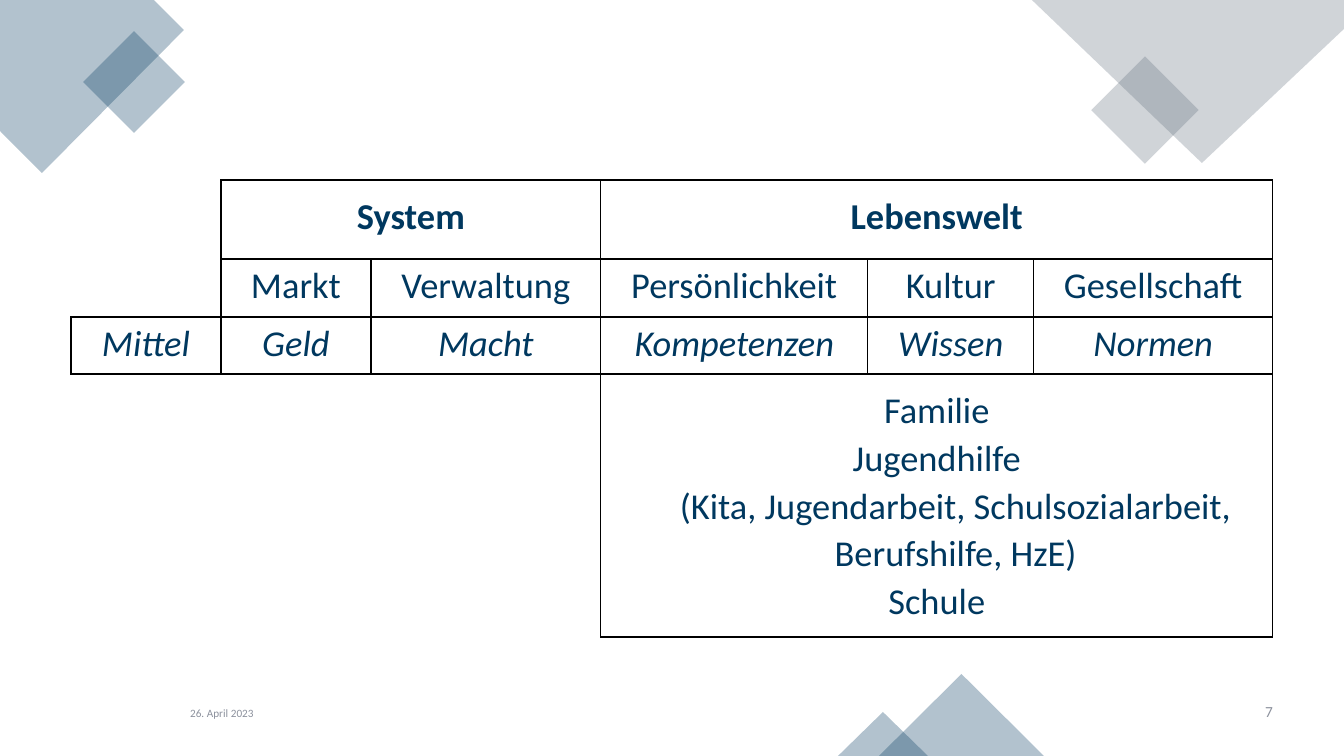
import pptx
import pptx.dml.color
import pptx.enum.shapes
import pptx.enum.text
import pptx.oxml
import pptx.oxml.ns
import pptx.util
from lxml import etree

SHAPE = pptx.enum.shapes.MSO_SHAPE
ALIGN = pptx.enum.text.PP_ALIGN
NAVY, SLATE, GREY, BLACK = "00385F", "657280", "8C919D", "000000"
COLS = [150, 150, 230, 267, 166, 239]
ROWS = [79, 58, 57, 263]
CELLS = [
    [None, "System", "", "Lebenswelt", "", ""],
    [None, "Markt", "Verwaltung", "Persönlichkeit", "Kultur", "Gesellschaft"],
    ["Mittel", "Geld", "Macht", "Kompetenzen", "Wissen", "Normen"],
    [None, None, None,
     "Familie\nJugendhilfe\v(Kita, Jugendarbeit, Schulsozialarbeit, Berufshilfe, HzE)\nSchule",
     "", ""],
]
SPANS = [(0, 1, 2), (0, 3, 5), (3, 3, 5)]
EDGES = [("L", 0, -1), ("R", 0, 1), ("T", -1, 0), ("B", 1, 0)]


def px(n):
    return round(n * 914400 / 100.8)


def rgb(color):
    return pptx.dml.color.RGBColor.from_string(color)


class Deck:
    """Holds the style and the current slide and draws its elements."""

    font = "Calibri"

    def __init__(self, prs):
        self.s = prs.slides.add_slide(prs.slide_layouts[6])

    def tint(self, sp, color):
        sp.shadow.inherit = False
        sp.line.fill.background()
        sp.fill.solid()
        sp.fill.fore_color.rgb = rgb(color)
        clr = sp._element.spPr.find(".//" + pptx.oxml.ns.qn("a:srgbClr"))
        etree.SubElement(clr, pptx.oxml.ns.qn("a:alpha"), val="30000")

    def shape(self, kind, x, y, w, h, color, rotation=0):
        sp = self.s.shapes.add_shape(kind, px(x), px(y), px(w), px(h))
        sp.rotation = rotation
        self.tint(sp, color)

    def outline(self, points, color):
        builder = self.s.shapes.build_freeform(*points[0], scale=px(1))
        builder.add_line_segments(points[1:], close=True)
        self.tint(builder.convert_to_shape(), color)

    def style(self, p, size, color, align, after, bold=False, italic=False):
        p.alignment = align
        p.space_after = pptx.util.Pt(after)
        for r in p.runs:
            r.font.name = self.font
            r.font.size = pptx.util.Pt(size)
            r.font.bold = bold
            r.font.italic = italic
            r.font.color.rgb = rgb(color)

    def footer(self, text, x, top, size, align):
        tf = self.s.shapes.add_textbox(px(x), px(701), px(302), px(40)).text_frame
        tf.word_wrap = True
        tf.margin_left = tf.margin_right = tf.margin_bottom = 0
        tf.margin_top = px(top)
        tf.text = text
        self.style(tf.paragraphs[0], size, GREY, align, 6)

    def border(self, cell, side, visible):
        ln = etree.SubElement(cell._tc.get_or_add_tcPr(), pptx.oxml.ns.qn("a:ln" + side),
                              w="12700")
        if visible:
            fill = etree.SubElement(ln, pptx.oxml.ns.qn("a:solidFill"))
            etree.SubElement(fill, pptx.oxml.ns.qn("a:srgbClr"), val=BLACK)
        else:
            etree.SubElement(ln, pptx.oxml.ns.qn("a:noFill"))

    def cell_text(self, cell, text, row):
        wide = row in (0, 3)
        cell.margin_left = cell.margin_right = px(23 if wide else 17)
        cell.margin_top = px(12 if wide else 2)
        cell.margin_bottom = px(12 if wide else 0)
        tf = cell.text_frame
        tf.text = text
        for i, p in enumerate(tf.paragraphs):
            last = i == len(tf.paragraphs) - 1
            p.line_spacing = 1.07
            self.style(p, 26, NAVY, ALIGN.CENTER, 8 if last else 0, row == 0, row == 2)
            if i:
                pPr = p._p.get_or_add_pPr()
                pPr.set("marL", str(px(38)))
                pPr.set("indent", str(-px(38)))

    def table(self, x, y):
        tbl = self.s.shapes.add_table(len(ROWS), len(COLS), px(x), px(y),
                                      px(sum(COLS)), px(sum(ROWS))).table
        tbl.first_row = tbl.horz_banding = False
        for col, w in zip(tbl.columns, COLS):
            col.width = px(w)
        for row, h in zip(tbl.rows, ROWS):
            row.height = px(h)
        for r, first, last in SPANS:
            tbl.cell(r, first).merge(tbl.cell(r, last))
        filled = {(r, c) for r, row in enumerate(CELLS)
                  for c, text in enumerate(row) if text is not None}
        for r, row in enumerate(CELLS):
            for c, text in enumerate(row):
                cell = tbl.cell(r, c)
                for side, dr, dc in EDGES:
                    self.border(cell, side, bool({(r, c), (r + dr, c + dc)} & filled))
                cell.fill.background()
                if text:
                    self.cell_text(cell, text, r)


def main():
    prs = pptx.Presentation()
    prs.slide_width, prs.slide_height = px(1344), px(756)
    deck = Deck(prs)
    deck.outline([(0, 0), (154, 0), (184, 30), (42, 173), (0, 131)], NAVY)
    deck.shape(SHAPE.RECTANGLE, 98, 46, 72, 72, NAVY, 315)
    deck.shape(SHAPE.RECTANGLE, 1107, 72, 76, 76, SLATE, 315)
    deck.outline([(1032, 0), (1344, 0), (1344, 29), (1202, 163)], SLATE)
    deck.footer("26. April 2023", 71, 5, 8, ALIGN.CENTER)
    deck.footer("7", 971, 1, 11, ALIGN.RIGHT)
    deck.shape(SHAPE.ISOSCELES_TRIANGLE, 879, 674, 165, 82, NAVY)
    deck.shape(SHAPE.ISOSCELES_TRIANGLE, 838, 712, 90, 44, NAVY)
    deck.table(71, 180)
    prs.save("out.pptx")


if __name__ == "__main__":
    main()
